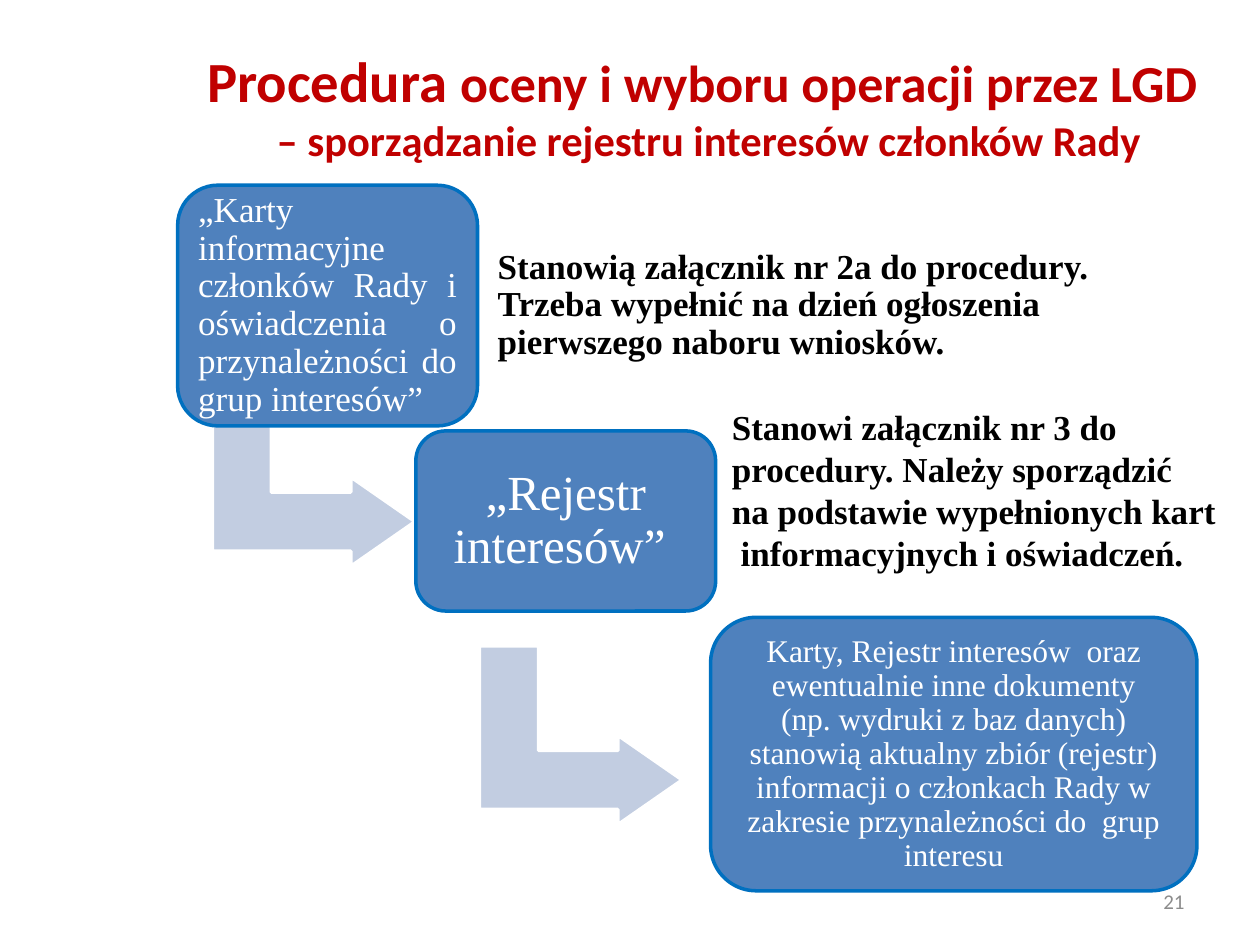
from pptx import Presentation
from pptx import util as u
from pptx.dml import color
from pptx.enum import shapes, text

SERIF = "Times New Roman"
SANS = "Calibri"
WHITE = "FFFFFF"
BLACK = "000000"
RED = "C00000"
CENTER = text.PP_ALIGN.CENTER
LEFT = text.PP_ALIGN.LEFT
MIDDLE = text.MSO_ANCHOR.MIDDLE


def rgb(value):
    return color.RGBColor.from_string(value)


def frame(at):
    return [u.Inches(value) for value in at]


def style_span(span, size, font, hue, bold=False):
    span.font.size = u.Pt(size)
    span.font.name = font
    span.font.bold = bold
    span.font.color.rgb = rgb(hue)


def set_insets(body, sides, top, bottom):
    body.margin_left = body.margin_right = u.Inches(sides)
    body.margin_top, body.margin_bottom = u.Inches(top), u.Inches(bottom)


def paint(shape, fill, line):
    shape.shadow.inherit = False
    shape.fill.solid()
    shape.fill.fore_color.rgb = rgb(fill)
    shape.line.color.rgb = rgb(line)
    shape.line.width = u.Pt(2)


def write(body, words, size, font, hue, align=LEFT, bold=False, spacing=1.0):
    body.word_wrap = True
    body.text = words
    para = body.paragraphs[0]
    para.alignment = align
    para.line_spacing = spacing
    style_span(para.runs[0], size, font, hue, bold)


def add_title(page):
    box = page.shapes.add_textbox(*frame((1.33, 0.08, 8.59, 1.39)))
    body = box.text_frame
    body.word_wrap = True
    body.vertical_anchor = MIDDLE
    set_insets(body, 0.1, 0.17, 0.05)
    lines = [
        [("Procedura ", 32.4), ("oceny i wyboru operacji przez LGD ", 29.7)],
        [("– sporządzanie rejestru interesów członków Rady", 24.3)],
    ]
    for index, line in enumerate(lines):
        para = body.add_paragraph() if index else body.paragraphs[0]
        para.alignment = CENTER
        for words, size in line:
            span = para.add_run()
            span.text = words
            style_span(span, size, SANS, RED, True)


def add_card(page, at, words, size, inset, align=CENTER):
    card = page.shapes.add_shape(shapes.MSO_SHAPE.ROUNDED_RECTANGLE, *frame(at))
    paint(card, "4F81BD", "0070C0")
    body = card.text_frame
    body.vertical_anchor = MIDDLE
    set_insets(body, inset, inset, inset)
    write(body, words, size, SERIF, WHITE, align, spacing=0.9)


def add_bent_arrow(page, left, top):
    arrow = page.shapes.add_shape(
        shapes.MSO_SHAPE.BENT_UP_ARROW, *frame((left, top, 1.42, 1.61)))
    arrow.rotation = 90
    for index, value in enumerate((0.33, 0.25, 0.36)):
        arrow.adjustments[index] = value
    paint(arrow, "C2CDE1", WHITE)


def add_note(page, at, words, spacing=1.0, inset=None, anchor=text.MSO_ANCHOR.TOP):
    body = page.shapes.add_textbox(*frame(at)).text_frame
    body.vertical_anchor = anchor
    if inset is not None:
        set_insets(body, inset, inset, inset)
    write(body, words, 20, SERIF, BLACK, bold=True, spacing=spacing)


def add_page_number(page):
    body = page.shapes.add_textbox(*frame((7.17, 6.95, 2.33, 0.4))).text_frame
    body.vertical_anchor = MIDDLE
    write(body, "21", 12, SANS, "8C8C8C", text.PP_ALIGN.RIGHT)


def main():
    deck = Presentation()
    deck.slide_width, deck.slide_height = u.Inches(10), u.Inches(7.5)
    page = deck.slides.add_slide(deck.slide_layouts[6])

    add_title(page)
    add_bent_arrow(page, 1.78, 2.98)
    add_card(page, (1.41, 1.47, 2.38, 1.91),
             "„Karty informacyjne członków Rady i oświadczenia "
             "o przynależności do grup interesów”",
             20, 0.07, text.PP_ALIGN.JUSTIFY)
    add_note(page, (3.88, 1.75, 5.45, 1.35),
             "Stanowią załącznik nr 2a do procedury. Trzeba wypełnić "
             "na dzień ogłoszenia pierwszego naboru wniosków.",
             0.9, 0.07, MIDDLE)
    add_bent_arrow(page, 3.9, 5.03)
    add_card(page, (3.3, 3.42, 2.38, 1.43), "„Rejestr interesów” ", 28, 0.13)
    add_card(page, (5.64, 4.9, 3.86, 2.17),
             "Karty, Rejestr interesów  oraz ewentualnie inne dokumenty "
             "(np. wydruki z baz danych) stanowią aktualny zbiór (rejestr) "
             "informacji o członkach Rady w zakresie przynależności do  "
             "grup interesu", 18, 0.17)
    add_page_number(page)
    add_note(page, (5.71, 3.17, 4.05, 1.45),
             "Stanowi załącznik nr 3 do procedury. Należy sporządzić "
             "na podstawie wypełnionych kart  informacyjnych i oświadczeń.")

    deck.save("out.pptx")


if __name__ == "__main__":
    main()
